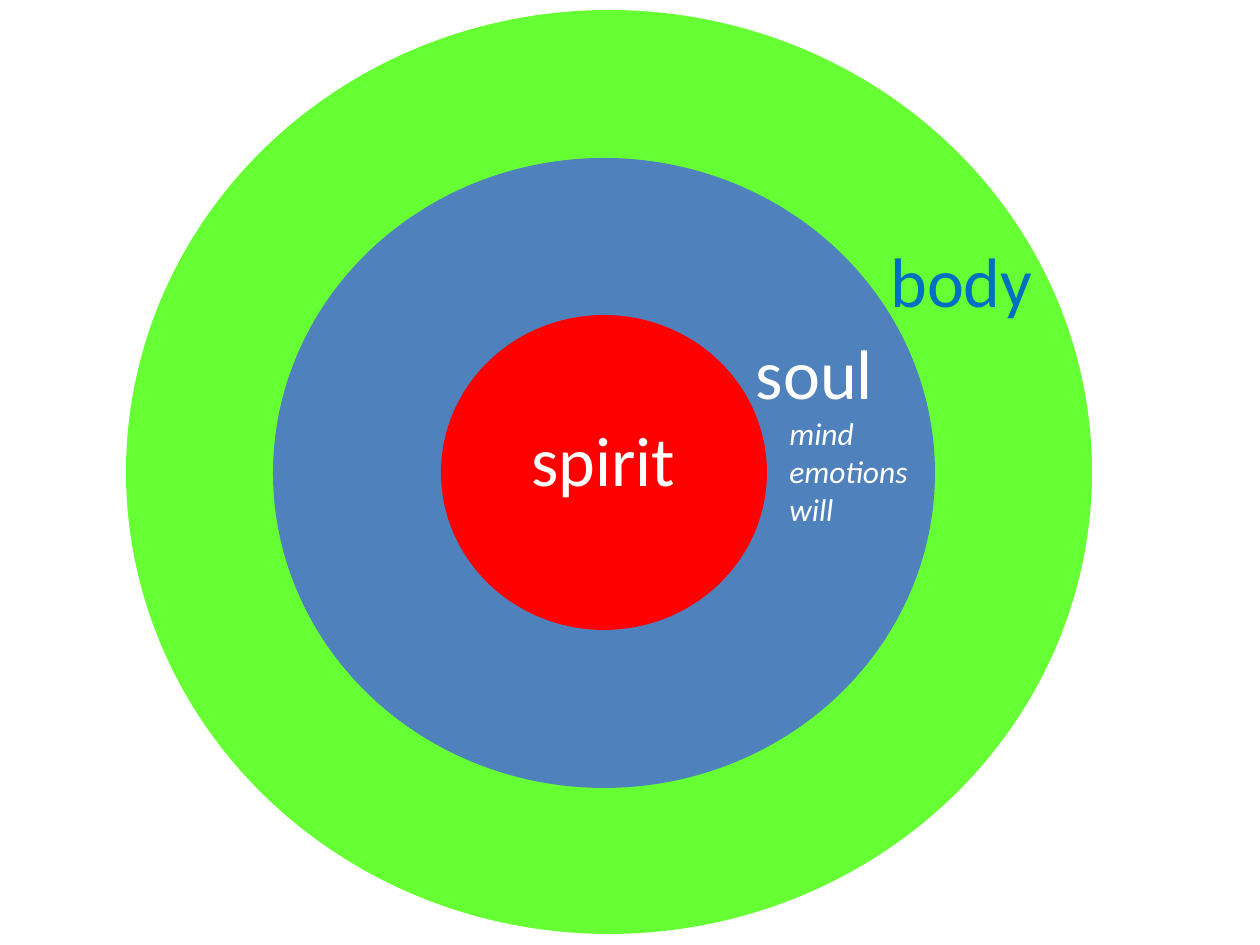
from dataclasses import dataclass

from pptx import Presentation
from pptx.dml.color import RGBColor
from pptx.enum.shapes import MSO_SHAPE
from pptx.enum.text import MSO_AUTO_SIZE, PP_ALIGN
from pptx.util import Pt

PX = 914400 // 126  # EMU per px


@dataclass(frozen=True)
class Theme:
    font: str = "Calibri"
    name_size: int = 40
    detail_size: int = 18
    white: str = "FFFFFF"
    body: str = "66FF33"
    body_name: str = "0070C0"
    soul: str = "4F81BD"
    spirit: str = "FF0000"


THEME = Theme()

# Outermost first: left, top, width, height, colour
RINGS = [
    (126, 10, 966, 924, THEME.body),
    (273, 158, 662, 630, THEME.soul),
    (441, 315, 326, 315, THEME.spirit),
]

# Name, left, top, colour
RING_NAMES = [
    ("spirit", 514, 410, THEME.white),
    ("soul", 725, 323, THEME.white),
    ("body", 872, 231, THEME.body_name),
]
LABEL_WIDTH, NAME_HEIGHT = 179, 97

SOUL_PARTS = ["mind", "emotions", "will"]
SOUL_PARTS_BOX = (777, 408, LABEL_WIDTH, 127)


def emu(*lengths):
    return [length * PX for length in lengths]


def add_ring(slide, box, colour):
    ring = slide.shapes.add_shape(MSO_SHAPE.OVAL, *emu(*box))
    ring.shadow.inherit = False
    ring.fill.solid()
    ring.fill.fore_color.rgb = RGBColor.from_string(colour)
    ring.line.fill.background()


def add_label(slide, lines, box, size, colour, align=PP_ALIGN.LEFT, italic=False):
    frame = slide.shapes.add_textbox(*emu(*box)).text_frame
    frame.word_wrap = True
    frame.auto_size = MSO_AUTO_SIZE.SHAPE_TO_FIT_TEXT
    frame.text = "\n".join(lines)
    for paragraph in frame.paragraphs:
        paragraph.alignment = align
        font = paragraph.font
        font.name = THEME.font
        font.size = Pt(size)
        font.italic = italic
        font.color.rgb = RGBColor.from_string(colour)


def main():
    deck = Presentation()
    deck.slide_width, deck.slide_height = emu(1260, 945)
    slide = deck.slides.add_slide(deck.slide_layouts.get_by_name("Blank"))

    for *box, colour in RINGS:
        add_ring(slide, box, colour)
    for name, left, top, colour in RING_NAMES:
        add_label(slide, [name], (left, top, LABEL_WIDTH, NAME_HEIGHT),
                  THEME.name_size, colour, align=PP_ALIGN.CENTER)
    add_label(slide, SOUL_PARTS, SOUL_PARTS_BOX,
              THEME.detail_size, THEME.white, italic=True)

    deck.save("out.pptx")


if __name__ == "__main__":
    main()
